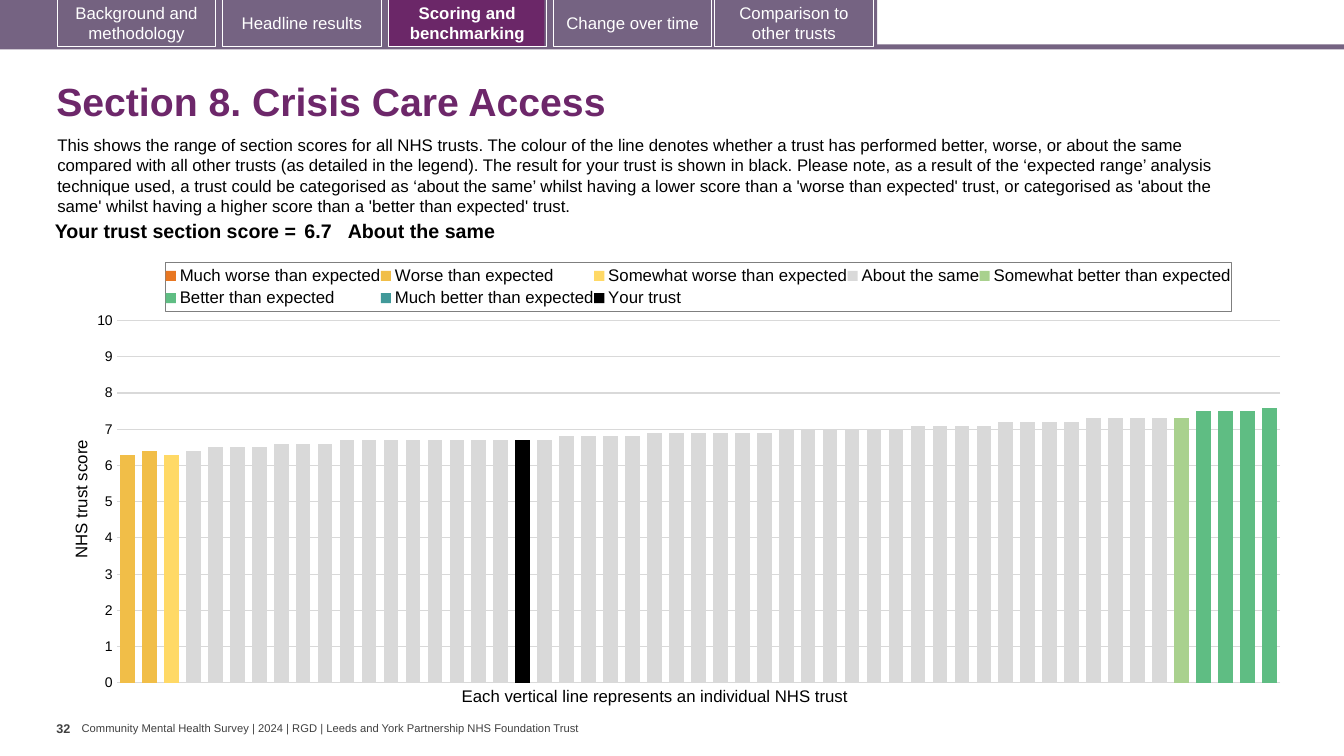
from copy import deepcopy

from lxml import etree
from pptx import Presentation
from pptx.chart.data import CategoryChartData
from pptx.dml.color import RGBColor
from pptx.enum.chart import XL_CHART_TYPE as Chart
from pptx.enum.chart import XL_LEGEND_POSITION as Legend
from pptx.enum.chart import XL_TICK_LABEL_POSITION as Label
from pptx.enum.chart import XL_TICK_MARK as Tick
from pptx.enum.shapes import MSO_SHAPE as Shape
from pptx.enum.text import MSO_ANCHOR as Anchor
from pptx.enum.text import PP_ALIGN as Align
from pptx.oxml import parse_xml
from pptx.oxml.ns import qn
from pptx.util import Inches, Pt

C_NS = "http://schemas.openxmlformats.org/drawingml/2006/chart"
A_NS = "http://schemas.openxmlformats.org/drawingml/2006/main"
PURPLE, MAUVE, DUSK, PLUM = "756382", "746280", "6B2768", "6D276A"
INSET = (0.1, 0.05, 0.1, 0.05)

INTRO = (
    "This shows the range of section scores for all NHS trusts. The colour of the line "
    "denotes whether a trust has performed better, worse, or about the same compared with "
    "all other trusts (as detailed in the legend). The result for your trust is shown in "
    "black. Please note, as a result of the ‘expected range’ analysis technique used, a "
    "trust could be categorised as ‘about the same’ whilst having a lower score than a "
    "'worse than expected' trust, or categorised as 'about the same' whilst having a "
    "higher score than a 'better than expected' trust."
)
FOOTER = ("Community Mental Health Survey | 2024 | RGD | "
          "Leeds and York Partnership NHS Foundation Trust")

# left, label, fill, bold
TABS = [
    (0.57, "Background and methodology", MAUVE, False),
    (2.21, "Headline results", None, False),
    (3.85, "Scoring and benchmarking", None, True),
    (5.49, "Change over time", PURPLE, False),
    (7.09, "Comparison to other trusts", PURPLE, False),
]

TRUSTS = 53
SAME = ([6.4] + [6.5] * 3 + [6.6] * 3 + [6.7] * 10 + [6.8] * 4 + [6.9] * 6
        + [7.0] * 6 + [7.1] * 4 + [7.2] * 4 + [7.3] * 4)
# name, colour, index of first trust, scores
BANDS = [
    ("Much worse than expected", "E87722", 0, []),
    ("Worse than expected", "F1BE48", 0, [6.3, 6.4]),
    ("Somewhat worse than expected", "FFD966", 2, [6.3]),
    ("About the same", "D9D9D9", 3, SAME),
    ("Somewhat better than expected", "A9D18E", 48, [7.3]),
    ("Better than expected", "5FBD83", 49, [7.5, 7.5, 7.5, 7.6]),
    ("Much better than expected", "419999", 0, []),
    ("Your trust", "000000", 18, [6.7]),
]


def color(code):
    return RGBColor.from_string(code)


def style(font, size, code="000000", bold=False):
    font.name, font.size, font.bold = "Arial", Pt(size), bold
    font.color.rgb = color(code)


def write(frame, text, size, code="000000", bold=False, align=None):
    frame.text = text
    para = frame.paragraphs[0]
    para.alignment = align
    style(para.runs[0].font, size, code, bold)


def add_text(slide, box, text, size, code="000000", bold=False,
             wrap=True, anchor=Anchor.TOP, inset=INSET):
    frame = slide.shapes.add_textbox(*map(Inches, box)).text_frame
    frame.word_wrap, frame.vertical_anchor = wrap, anchor
    (frame.margin_left, frame.margin_top,
     frame.margin_right, frame.margin_bottom) = map(Inches, inset)
    write(frame, text, size, code, bold)
    return frame


def add_rect(slide, box, fill, line=None):
    rect = slide.shapes.add_shape(Shape.RECTANGLE, *map(Inches, box))
    rect.shadow.inherit = False
    if fill:
        rect.fill.solid()
        rect.fill.fore_color.rgb = color(fill)
    else:
        rect.fill.background()
    if line:
        rect.line.color.rgb = color(line)
        rect.line.width = Pt(0.75)
    else:
        rect.line.fill.background()
    return rect


def add_tabs(slide):
    for box, fill in [((0, 0.44, 13.33, 0.05), PURPLE), ((0, 0, 8.7, 0.47), PURPLE),
                      ((0.59, 0, 1.54, 0.46), MAUVE), ((3.86, 0, 1.54, 0.46), DUSK)]:
        add_rect(slide, box, fill)
    for left, label, fill, bold in TABS:
        tab = add_rect(slide, (left, -0.01, 1.57, 0.47), fill, "FFFFFF")
        tab.text_frame.word_wrap = True
        tab.text_frame.vertical_anchor = Anchor.MIDDLE
        write(tab.text_frame, label, 12, "FFFFFF", bold, Align.CENTER)


def add_score(slide):
    table = slide.shapes.add_table(
        1, 3, Inches(0.35), Inches(2.15), Inches(11.69), Inches(0.22)).table
    table.first_row = table.horz_banding = False
    cells = [("Your trust section score =", 2.63, 0.04, Align.RIGHT),
             ("6.7", 0.47, 0.04, Align.LEFT),
             ("About the same", 8.59, 0, Align.LEFT)]
    for col, (text, width, side, align) in enumerate(cells):
        table.columns[col].width = Inches(width)
        cell = table.cell(0, col)
        cell.fill.background()
        cell.margin_left = cell.margin_right = Inches(side)
        cell.margin_top = cell.margin_bottom = Inches(0.04)
        write(cell.text_frame, text, 14, bold=True, align=align)


def layout(left, top, width=None, height=None, inner=False):
    """Manual chart layout, in fractions of the chart's size."""
    target = '<c:layoutTarget val="inner"/>' if inner else ""
    modes = '<c:xMode val="edge"/><c:yMode val="edge"/>'
    sizes = zip("xywh", (left, top, width, height))
    parts = "".join(f'<c:{k} val="{v}"/>' for k, v in sizes if v is not None)
    return parse_xml(f'<c:layout xmlns:c="{C_NS}"><c:manualLayout>{target}{modes}'
                     f'{parts}</c:manualLayout></c:layout>')


def place(parent, index, node):
    for old in parent.findall(qn("c:layout")):
        parent.remove(old)
    parent.insert(index, node)


def split_last(chart):
    """Move the last series to a second, unlabelled axis on the right."""
    area = chart._chartSpace.chart.plotArea
    bars = area.find(qn("c:barChart"))
    extra = deepcopy(bars)
    for ser in extra.findall(qn("c:ser"))[:-1]:
        extra.remove(ser)
    bars.remove(bars.findall(qn("c:ser"))[-1])
    bars.addnext(extra)
    cat, val = (deepcopy(area.find(qn(tag))) for tag in ("c:catAx", "c:valAx"))
    for axis, own, other in ((cat, "9001", "9002"), (val, "9002", "9001")):
        axis.find(qn("c:axId")).set("val", own)
        axis.find(qn("c:crossAx")).set("val", other)
    for node, own in zip(extra.findall(qn("c:axId")), ("9001", "9002")):
        node.set("val", own)
    val.find(qn("c:axPos")).set("val", "r")
    val.find(qn("c:crosses")).set("val", "max")
    val.find(qn("c:tickLblPos")).set("val", "none")
    val.remove(val.find(qn("c:majorGridlines")))
    area.findall(qn("c:valAx"))[-1].addnext(val)
    val.addnext(cat)


def add_legend(chart):
    chart.has_legend = True
    legend = chart.legend
    legend.position, legend.include_in_layout = Legend.TOP, False
    style(legend.font, 12)
    node = legend._element
    place(node, 1, layout(0.08, 0.03, 0.87, 0.11))
    border = etree.fromstring(
        f'<c:spPr xmlns:c="{C_NS}" xmlns:a="{A_NS}"><a:ln w="9525"><a:solidFill>'
        '<a:srgbClr val="7F7F7F"/></a:solidFill></a:ln></c:spPr>')
    node.find(qn("c:overlay")).addnext(border)


def add_bars(slide):
    data = CategoryChartData()
    data.categories = [str(n + 1) for n in range(TRUSTS)]
    for name, _, start, vals in BANDS:
        rest = TRUSTS - start - len(vals)
        data.add_series(name, [None] * start + vals + [None] * rest)
    chart = slide.shapes.add_chart(
        Chart.COLUMN_CLUSTERED, Inches(0.67), Inches(2.47),
        Inches(12.15), Inches(4.44), data).chart
    chart.has_title = False
    style(chart.font, 10)
    chart.font.name = "Calibri"
    plot = chart.plots[0]
    plot.gap_width, plot.overlap, plot.vary_by_categories = 50, 100, False
    for ser, (_, code, _, _) in zip(plot.series, BANDS):
        ser.format.fill.solid()
        ser.format.fill.fore_color.rgb = color(code)
    chart.category_axis.visible = False
    axis = chart.value_axis
    axis.minimum_scale, axis.maximum_scale, axis.major_unit = 0, 10, 1
    axis.major_tick_mark, axis.tick_label_position = Tick.NONE, Label.NEXT_TO_AXIS
    axis.format.line.fill.background()
    style(axis.tick_labels.font, 10)
    axis.tick_labels.number_format = "0"
    axis.tick_labels.number_format_is_linked = False
    grid = axis.major_gridlines.format.line
    grid.color.rgb, grid.width = color("D9D9D9"), Pt(0.75)
    split_last(chart)
    write(axis.axis_title.text_frame, "NHS trust score", 12)
    place(axis.axis_title._element, 1, layout(0, 0.42))
    place(chart._chartSpace.chart.plotArea, 0, layout(0.04, 0.16, 0.95, 0.81, True))
    add_legend(chart)


def main():
    deck = Presentation()
    deck.slide_width, deck.slide_height = Inches(13.33), Inches(7.5)
    slide = deck.slides.add_slide(deck.slide_layouts[6])
    add_text(slide, (0.81, 7.16, 5.01, 0.13), FOOTER, 8, "404040",
             wrap=False, anchor=Anchor.MIDDLE, inset=(0, 0, 0, 0))
    add_tabs(slide)
    title = add_text(slide, (0.46, 0.67, 12.49, 0.72), "Section 8. Crisis Care Access",
                     28, PLUM, bold=True, anchor=Anchor.MIDDLE)
    title.paragraphs[0].line_spacing = 0.9
    add_text(slide, (0.56, 7.1, 0.25, 0.4), "32", 9, "404040", bold=True,
             wrap=False, inset=(0, 0.05, 0, 0.05))
    add_text(slide, (0.47, 1.29, 12.13, 0.91), INTRO, 12)
    add_text(slide, (4.48, 6.75, 4.11, 0.3),
             "Each vertical line represents an individual NHS trust", 12, wrap=False)
    add_bars(slide)
    add_score(slide)
    deck.save("out.pptx")


if __name__ == "__main__":
    main()
